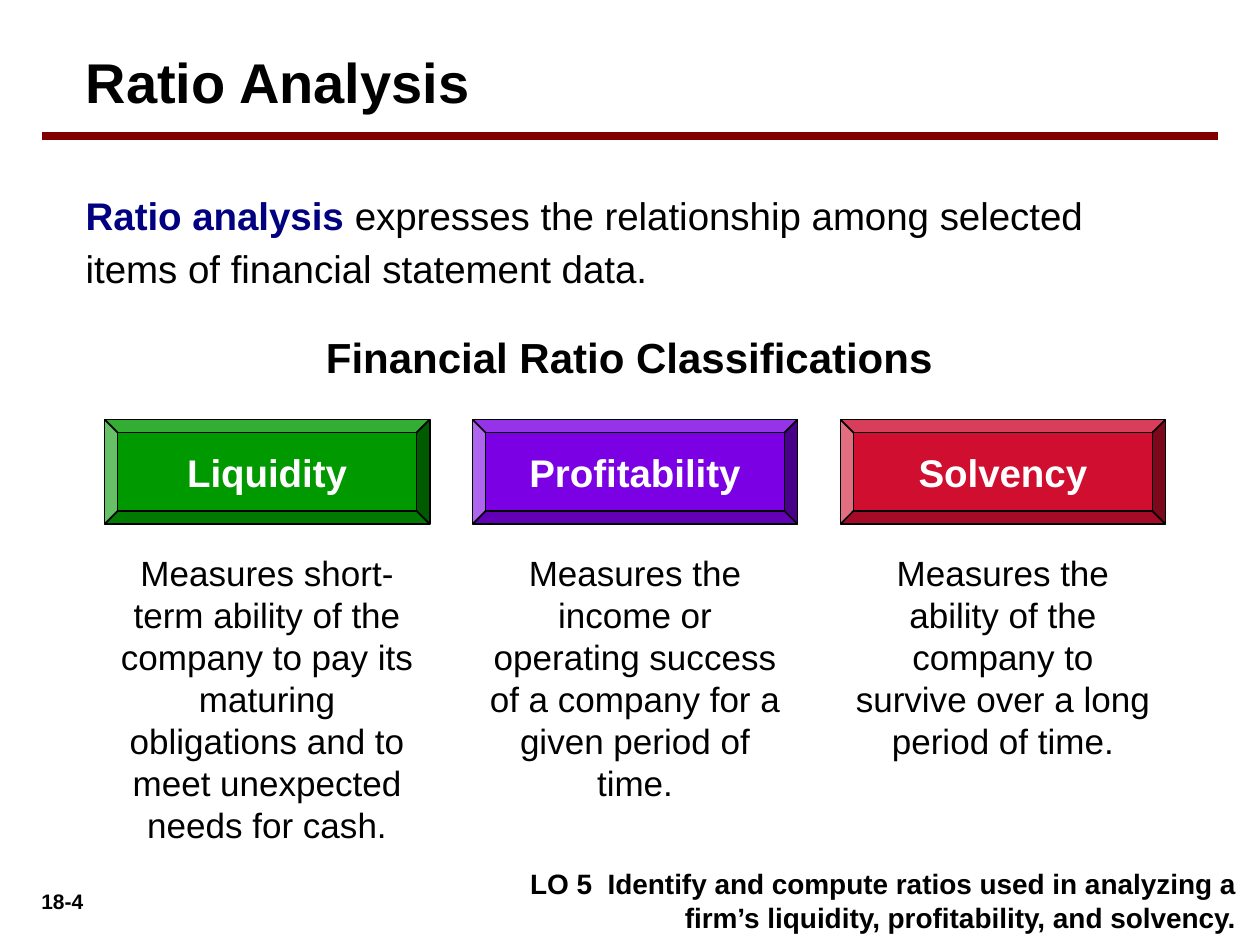
from lxml.etree import SubElement
from pptx import Presentation
from pptx.dml.color import RGBColor
from pptx.enum.shapes import MSO_CONNECTOR, MSO_SHAPE
from pptx.enum.text import MSO_ANCHOR, MSO_AUTO_SIZE, PP_ALIGN
from pptx.oxml.ns import qn
from pptx.util import Inches, Pt

COLORS = {
    "black": "000000",
    "white": "FFFFFF",
    "navy": "000080",
    "maroon": "800000",
    "green": "009900",
    "purple": "7B00E4",
    "red": "CF0E30",
}

CLASSIFICATIONS = [
    ("Liquidity", "green", "Measures short-term ability of the company to pay its "
     "maturing obligations and to meet unexpected needs for cash."),
    ("Profitability", "purple", "Measures the income or operating success of a "
     "company for a given period of time."),
    ("Solvency", "red", "Measures the ability of the company to survive over a "
     "long period of time."),
]


def color(name):
    """Return the palette colour with the given name."""
    return RGBColor.from_string(COLORS[name])


def place(shape, left, top, width, height):
    """Move a shape to a box given in inches."""
    shape.left, shape.top = Inches(left), Inches(top)
    shape.width, shape.height = Inches(width), Inches(height)


def format_run(run, size, bold=False, color_name="black"):
    """Set the font of one run."""
    run.font.name = "Arial"
    run.font.size = Pt(size)
    run.font.bold = bold
    run.font.color.rgb = color(color_name)


def write(shape, text, size, bold=False, color_name="black",
          align=PP_ALIGN.LEFT, anchor=MSO_ANCHOR.TOP, wrap=True):
    """Fill a shape with one formatted paragraph."""
    frame = shape.text_frame
    frame.text = text
    frame.word_wrap = wrap
    frame.auto_size = MSO_AUTO_SIZE.NONE
    frame.vertical_anchor = anchor
    paragraph = frame.paragraphs[0]
    paragraph.alignment = align
    format_run(paragraph.runs[0], size, bold, color_name)


def add_text(slide, box, text, size, **style):
    """Add a text box in the given box."""
    write(slide.shapes.add_textbox(*map(Inches, box)), text, size, **style)


def add_heading(slide, left, top, width, height):
    """Place the slide title and the rule below it."""
    place(slide.shapes.title, left, top, width, height)
    write(slide.shapes.title, "Ratio Analysis", 32, bold=True)
    rule_y = Inches(top + 0.75)
    rule = slide.shapes.add_connector(
        MSO_CONNECTOR.STRAIGHT, Inches(0.33), rule_y, Inches(9.67), rule_y)
    rule.line.color.rgb = color("maroon")
    rule.line.width = Pt(4.5)
    SubElement(rule._element.spPr, qn("a:effectLst"))


def add_definition(slide, left, top, width, height):
    """Place the definition in the body placeholder, without a bullet."""
    body = slide.placeholders[1]
    place(body, left, top, width, height)
    write(body, "Ratio analysis ", 22, bold=True, color_name="navy")
    paragraph = body.text_frame.paragraphs[0]
    run = paragraph.add_run()
    run.text = "expresses the relationship among selected items of financial statement data."
    format_run(run, 22)
    paragraph.line_spacing = 1.15
    paragraph.space_before = Pt(0)
    properties = paragraph._p.get_or_add_pPr()
    properties.set("marL", "0")
    properties.set("indent", "0")
    SubElement(properties, qn("a:buNone"))


def add_classification(slide, left, top, width, height, name, fill, description):
    """Place a bevelled label with its description below."""
    label_height = 0.83
    label = slide.shapes.add_shape(
        MSO_SHAPE.BEVEL, *map(Inches, (left, top, width, label_height)))
    label.adjustments[0] = 0.125
    label.shadow.inherit = False
    label.fill.solid()
    label.fill.fore_color.rgb = color(fill)
    label.line.color.rgb = color("black")
    label.line.width = Pt(1)
    write(label, name, 22, bold=True, color_name="white",
          align=PP_ALIGN.CENTER, anchor=MSO_ANCHOR.MIDDLE, wrap=False)
    description_top = top + label_height + 0.17
    add_text(slide, (left, description_top, width, top + height - description_top),
             description, 20, align=PP_ALIGN.CENTER)


def add_classifications(slide, left, top, width, height):
    """Place the subheading and the three equal columns."""
    heading_height = 0.5
    add_text(slide, (left, top, width, heading_height), "Financial Ratio Classifications",
             24, bold=True, align=PP_ALIGN.CENTER)
    column_width, gap = 2.58, 0.34
    column_top = top + heading_height + 0.25
    first_left = left + 0.25
    for index, classification in enumerate(CLASSIFICATIONS):
        add_classification(slide, first_left + index * (column_width + gap), column_top,
                           column_width, top + height - column_top, *classification)


def add_footer(slide, left, top, width, height):
    """Place the page number and the learning objective."""
    add_text(slide, (left, top + 0.17, 0.83, 0.3), "18-4", 12, bold=True,
             align=PP_ALIGN.CENTER)
    objective_width = 6.08
    add_text(slide, (left + width - objective_width, top, objective_width, height),
             "LO 5  Identify and compute ratios used in analyzing a firm’s liquidity, "
             "profitability, and solvency.", 16, bold=True, align=PP_ALIGN.RIGHT)


def main():
    """Build and save the slide."""
    presentation = Presentation()
    presentation.slide_width, presentation.slide_height = Inches(10), Inches(7.5)
    slide = presentation.slides.add_slide(presentation.slide_layouts[1])
    add_heading(slide, 0.58, 0.33, 9, 0.61)
    add_definition(slide, 0.58, 1.42, 8.67, 0.92)
    add_classifications(slide, 0.58, 2.58, 8.83, 4.17)
    add_footer(slide, 0.08, 6.83, 9.83, 0.64)
    presentation.save("out.pptx")


if __name__ == "__main__":
    main()
